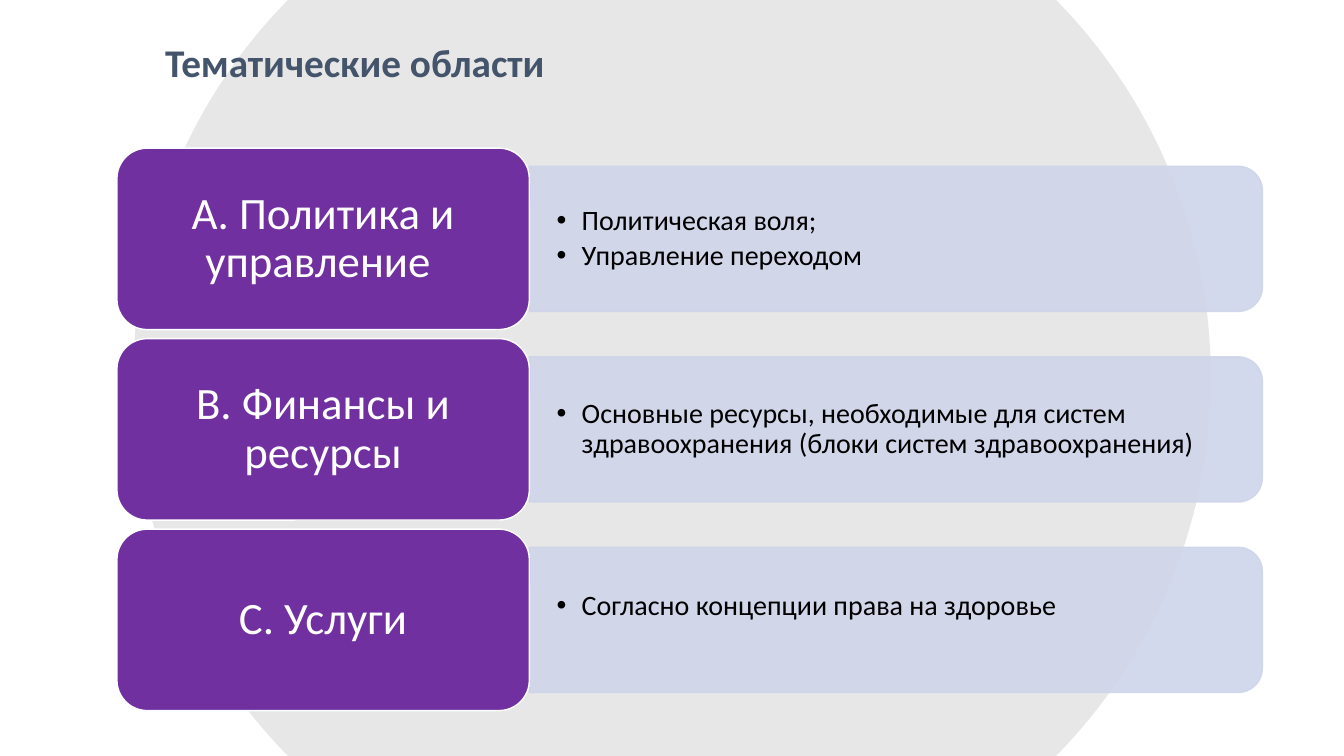
import math
from lxml import etree
from pptx import Presentation
from pptx.dml.color import RGBColor
from pptx.enum.shapes import MSO_SHAPE
from pptx.enum.text import MSO_ANCHOR, PP_ALIGN
from pptx.oxml.ns import qn
from pptx.util import Inches, Pt

ROUND, ROUND_TOP = MSO_SHAPE.ROUNDED_RECTANGLE, MSO_SHAPE.ROUND_2_SAME_RECTANGLE
MIDDLE = MSO_ANCHOR.MIDDLE
LEFT, CENTER = PP_ALIGN.LEFT, PP_ALIGN.CENTER

FONT = "Calibri"
GRAY = RGBColor(0xD9, 0xD9, 0xD9)
SLATE = RGBColor(0x44, 0x54, 0x6A)
PURPLE = RGBColor(0x70, 0x30, 0xA0)
LAVENDER = RGBColor(0xCF, 0xD5, 0xEA)
WHITE = RGBColor(0xFF, 0xFF, 0xFF)
BLACK = RGBColor(0, 0, 0)

TITLE = "Тематические области"
AREAS = [
    ("A. Политика и управление ", ["Политическая воля;", "Управление переходом"], 0),
    ("B. Финансы и ресурсы",
     ["Основные ресурсы, необходимые для систем здравоохранения (блоки систем здравоохранения)"], 0),
    ("C. Услуги", ["Согласно концепции права на здоровье"], 0.26),
]

SLIDE_W, SLIDE_H = 13.33, 7.5
RADIUS = 5.345
TOP, PITCH = 1.47, 1.89
LABEL_X, LABEL_W, LABEL_H = 1.16, 4.09, 1.8
PANEL_X, PANEL_W, PANEL_H = LABEL_X + LABEL_W, 7.27, 1.44
TEXT_W, TEXT_H = 7.2, 1.3


def set_alpha(fill_format, parent, percent):
    for color in parent.iter(qn("a:srgbClr")):
        etree.SubElement(color, qn("a:alpha")).set("val", str(percent * 1000))


def paint(sp, color, line=None, alpha=None):
    sp.shadow.inherit = False
    sp.fill.solid()
    sp.fill.fore_color.rgb = color
    if line is None:
        sp.line.fill.background()
    else:
        sp.line.color.rgb = line
        sp.line.width = Pt(1)
    if alpha:
        for clr in sp._element.spPr.iter(qn("a:srgbClr")):
            etree.SubElement(clr, qn("a:alpha")).set("val", str(alpha * 1000))


def setup_frame(sp, insets):
    tf = sp.text_frame
    tf.word_wrap = True
    tf.vertical_anchor = MIDDLE
    tf.margin_left, tf.margin_top, tf.margin_right, tf.margin_bottom = map(Inches, insets)
    return tf


def write(p, text, size, color, align=LEFT, bold=False):
    p.alignment = align
    p.line_spacing = 0.9
    r = p.add_run()
    r.text = text
    r.font.name = FONT
    r.font.size = Pt(size)
    r.font.bold = bold
    r.font.color.rgb = color


def add_bullet(p):
    pPr = p._p.get_or_add_pPr()
    pPr.set("marL", str(Inches(0.25)))
    pPr.set("indent", str(-Inches(0.25)))
    etree.SubElement(pPr, qn("a:buFont")).set("typeface", "Arial")
    etree.SubElement(pPr, qn("a:buChar")).set("char", "•")


def add_backdrop(s):
    cx, cy = SLIDE_W / 2, SLIDE_H / 2
    limit = math.asin(cy / RADIUS)
    steps = 60
    angles = [limit * (2 * i / steps - 1) for i in range(steps + 1)]
    right = [(cx + RADIUS * math.cos(a), cy + RADIUS * math.sin(a)) for a in angles]
    left = [(SLIDE_W - x, y) for x, y in reversed(right)]
    points = [(Inches(x), Inches(y)) for x, y in right + left]
    builder = s.shapes.build_freeform(*points[0])
    builder.add_line_segments(points[1:], close=True)
    paint(builder.convert_to_shape(), GRAY, alpha=62)


def add_area(s, top, label, bullets, lift):
    mid = top + LABEL_H / 2
    panel = s.shapes.add_shape(
        ROUND_TOP, Inches(PANEL_X + (PANEL_W - PANEL_H) / 2), Inches(mid - PANEL_W / 2),
        Inches(PANEL_H), Inches(PANEL_W))
    panel.rotation = 90
    paint(panel, LAVENDER, LAVENDER, 90)

    box = s.shapes.add_textbox(
        Inches(PANEL_X), Inches(mid - TEXT_H / 2), Inches(TEXT_W), Inches(TEXT_H))
    tf = setup_frame(box, (0.27, 0.14, 0.27, 0.14 + lift))
    for i, text in enumerate(bullets):
        p = tf.add_paragraph() if i else tf.paragraphs[0]
        write(p, text, 20, BLACK)
        p.space_after = Pt(3)
        add_bullet(p)

    card = s.shapes.add_shape(
        ROUND, Inches(LABEL_X), Inches(top), Inches(LABEL_W), Inches(LABEL_H))
    paint(card, PURPLE, WHITE)
    tf = setup_frame(card, (0.13, 0.07, 0.13, 0.07))
    write(tf.paragraphs[0], label, 32, WHITE, CENTER)


def main():
    prs = Presentation()
    prs.slide_width, prs.slide_height = Inches(SLIDE_W), Inches(SLIDE_H)
    s = prs.slides.add_slide(prs.slide_layouts[6])
    add_backdrop(s)
    title = s.shapes.add_textbox(Inches(1.54), Inches(0.27), Inches(5.12), Inches(0.75))
    tf = setup_frame(title, (0.1, 0.05, 0.1, 0.05))
    write(tf.paragraphs[0], TITLE, 28, SLATE, bold=True)
    for i, area in enumerate(AREAS):
        add_area(s, TOP + i * PITCH, *area)
    prs.save("out.pptx")


if __name__ == "__main__":
    main()
